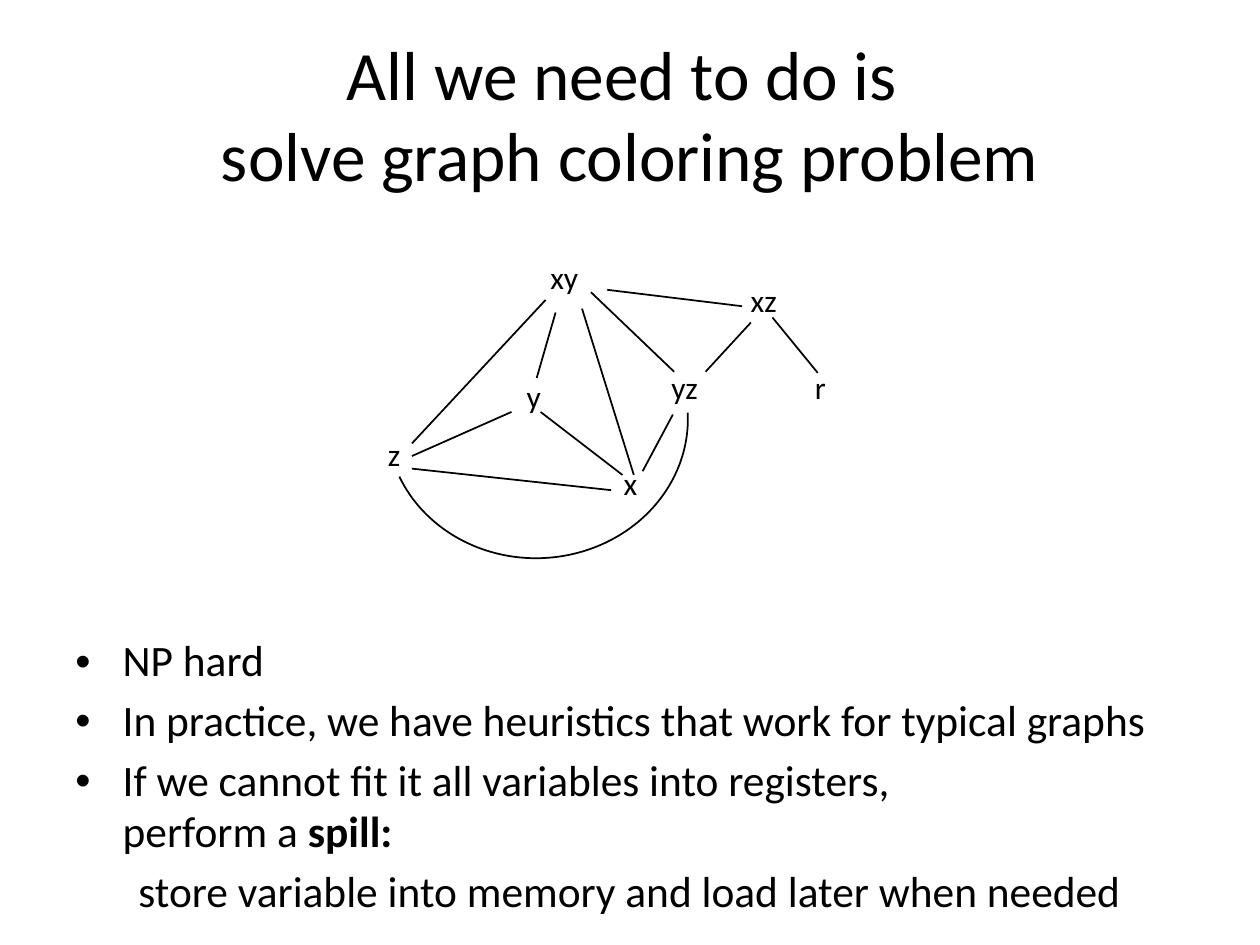
from lxml import etree
from pptx import Presentation
from pptx.dml.color import RGBColor
from pptx.enum.shapes import MSO_CONNECTOR, MSO_SHAPE
from pptx.enum.text import MSO_ANCHOR, PP_ALIGN
from pptx.oxml.ns import qn
from pptx.util import Pt

STRAIGHT = MSO_CONNECTOR.STRAIGHT
ARC = MSO_SHAPE.ARC
TOP, MIDDLE = MSO_ANCHOR.TOP, MSO_ANCHOR.MIDDLE
LEFT, CENTER = PP_ALIGN.LEFT, PP_ALIGN.CENTER

COLORS = {"ink": "000000", "paper": "FFFFFF"}
FONT = "Calibri"
NODE_WIDTH, NODE_HEIGHT = 48, 44.6
BULLET_INDENT = 27

# Node label: left, top
NODES = {
    "y": (293.8, 211.7),
    "yz": (376.6, 206.6),
    "x": (349.2, 261.4),
    "z": (214.6, 244.8),
    "xz": (421.9, 157),
    "xy": (307.4, 144),
    "r": (458.6, 206.6),
}

# Interference edges: x1, y1, x2, y2
EDGES = [
    (332.6, 176.4, 362.2, 271.4),  # xy - x
    (349.2, 280.1, 235.4, 267.8),  # x - z
    (308.9, 235.4, 355.7, 271.4),  # y - x
    (317.5, 178.6, 306.7, 216),    # xy - y
    (235.4, 260.6, 292.3, 235.4),  # z - y
    (311.8, 171.4, 235.4, 253.4),  # xy - z
    (337.7, 167, 385.2, 212.4),    # xy - yz
    (384.5, 236.9, 367.2, 269.3),  # yz - x
    (347, 165.6, 424.1, 175),      # xy - xz
    (429.1, 184.3, 403.2, 212.4),  # xz - yz
    (441.4, 181.4, 467.3, 213.1),  # xz - r
]

# Each point: bulleted?, lines of (text, bold) runs
POINTS = [
    (True, [[("NP hard", False)]]),
    (True, [[("In practice, we have heuristics that work for typical graphs", False)]]),
    (True, [[("If we cannot fit it all variables into registers, ", False)],
            [("perform a ", False), ("spill:", True)]]),
    (False, [[("\tstore variable into memory and load later when needed", False)]]),
]


def write_lines(paragraph, lines, size, align=LEFT, before=0, spacing=None):
    """Fill a paragraph with lines of (text, bold) runs."""
    paragraph.alignment = align
    paragraph.space_before = Pt(before)
    if spacing:
        paragraph.line_spacing = spacing
    for number, line in enumerate(lines):
        if number:
            paragraph.add_line_break()
        for text, bold in line:
            run = paragraph.add_run()
            run.text = text
            run.font.name = FONT
            run.font.size = Pt(size)
            run.font.bold = bold
            run.font.color.rgb = RGBColor.from_string(COLORS["ink"])


class GraphSlide:
    def __init__(self, slide, line_width=1):
        self.slide = slide
        self.line_width = line_width
        slide.background.fill.solid()
        slide.background.fill.fore_color.rgb = RGBColor.from_string(COLORS["paper"])

    def text_frame(self, left, top, width, height, anchor=TOP):
        box = self.slide.shapes.add_textbox(Pt(left), Pt(top), Pt(width), Pt(height))
        box.text_frame.word_wrap = True
        box.text_frame.vertical_anchor = anchor
        return box.text_frame

    def title(self, lines):
        frame = self.text_frame(36, 21.6, 648, 90, MIDDLE)
        write_lines(frame.paragraphs[0], [[(line, False)] for line in lines],
                    39.6, align=CENTER, spacing=0.98)

    def points(self, points):
        frame = self.text_frame(36, 360, 672, 150)
        for number, (bulleted, lines) in enumerate(points):
            paragraph = frame.add_paragraph() if number else frame.paragraphs[0]
            write_lines(paragraph, lines, 24.8, before=5, spacing=0.98)
            if bulleted:
                props = paragraph._p.get_or_add_pPr()
                props.set("marL", str(Pt(BULLET_INDENT)))
                props.set("indent", str(-Pt(BULLET_INDENT)))
                etree.SubElement(props, qn("a:buFont"), typeface="Arial")
                etree.SubElement(props, qn("a:buChar"), char="•")

    def node(self, label, left, top):
        frame = self.text_frame(left, top, NODE_WIDTH, NODE_HEIGHT)
        write_lines(frame.paragraphs[0], [[(label, False)]], 18)

    def style_line(self, line):
        line.color.rgb = RGBColor.from_string(COLORS["ink"])
        line.width = Pt(self.line_width)

    def edge(self, *ends):
        edge = self.slide.shapes.add_connector(STRAIGHT, *map(Pt, ends))
        self.style_line(edge.line)
        etree.SubElement(edge._element.spPr, qn("a:effectLst"))

    def curved_edge(self, left, top, width, height, rotation, angles):
        curve = self.slide.shapes.add_shape(ARC, Pt(left), Pt(top), Pt(width), Pt(height))
        curve.rotation = rotation
        for number, angle in enumerate(angles):
            curve.adjustments[number] = angle * 0.6  # degrees to adjustment units
        curve.fill.background()
        curve.shadow.inherit = False
        self.style_line(curve.line)


def main():
    deck = Presentation()
    deck.slide_width, deck.slide_height = Pt(720), Pt(540)
    page = GraphSlide(deck.slides.add_slide(deck.slide_layouts[6]))

    # Title and points
    page.title(["All we need to do is ", "solve graph coloring problem"])
    page.points(POINTS)

    # Interference graph
    for label, (left, top) in NODES.items():
        page.node(label, left, top)
    for ends in EDGES:
        page.edge(*ends)
    page.curved_edge(228.2, 154.1, 157.7, 172.1, 87.1, (270, 70.65))  # z - yz

    deck.save("out.pptx")


if __name__ == "__main__":
    main()
